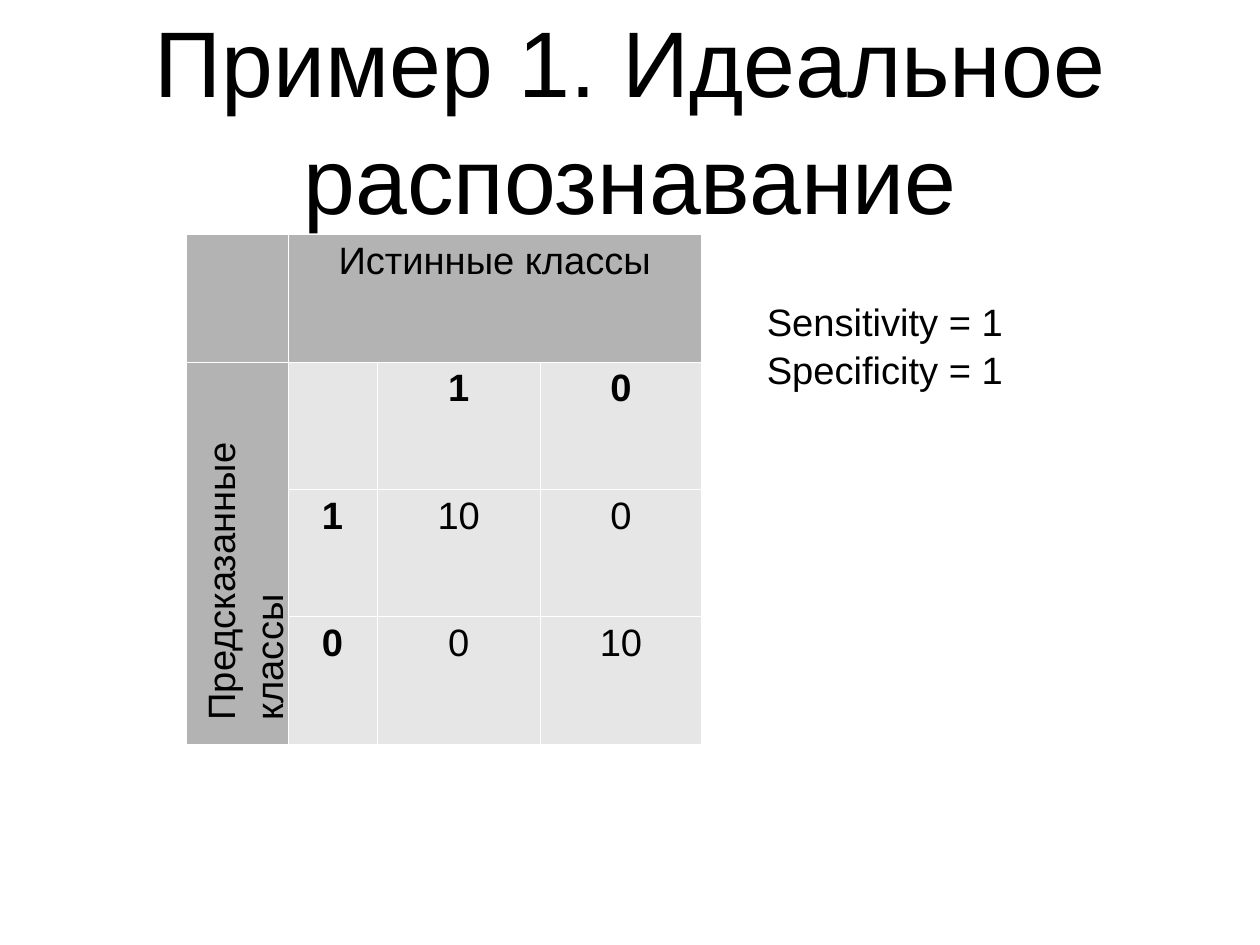
from lxml import etree
from pptx import Presentation
from pptx.dml import color
from pptx.enum import text
from pptx.oxml import ns
from pptx.util import Cm, Pt

COLORS = {"ink": "000000", "heading": "B3B3B3", "body": "E6E6E6", "rule": "FFFFFF"}
FONT = "Arial"
MATRIX = [
    ["", "Истинные классы", "", ""],
    ["", "", "1", "0"],
    ["", "1", "10", "0"],
    ["", "0", "0", "10"],
]
COLUMN_WIDTHS = [2.26, 1.98, 3.63, 3.58]


def rgb(name):
    """Return the palette colour with this name."""
    return color.RGBColor.from_string(COLORS[name])


def set_attributes(target, values):
    """Set every named attribute on the target."""
    for name, value in values.items():
        setattr(target, name, value)


def write(frame, lines, size=24, align=text.PP_ALIGN.LEFT, bold=False, spacing=1.05):
    """Fill a text frame with one formatted paragraph per line."""
    frame.text = "\n".join(lines)
    for paragraph in frame.paragraphs:
        set_attributes(paragraph, {"alignment": align, "line_spacing": spacing})
        set_attributes(paragraph.font, {"name": FONT, "size": Pt(size), "bold": bold})
        paragraph.font.color.rgb = rgb("ink")


def add_title(slide, box, heading):
    """Place the slide title in its box."""
    title = slide.shapes.title
    set_attributes(title, dict(zip(("left", "top", "width", "height"), map(Cm, box))))
    set_attributes(title.text_frame, {
        "word_wrap": True, "auto_size": text.MSO_AUTO_SIZE.NONE,
        "vertical_anchor": text.MSO_ANCHOR.MIDDLE,
        "margin_left": 0, "margin_right": 0, "margin_top": 0, "margin_bottom": 0,
    })
    write(title.text_frame, [heading], size=58.7, align=text.PP_ALIGN.CENTER)


def add_note(slide, box, lines, rotation=0):
    """Place left-aligned lines in a box, turned if asked."""
    note = slide.shapes.add_textbox(*map(Cm, box))
    note.rotation = rotation
    note.text_frame.word_wrap = True
    write(note.text_frame, lines)


def set_borders(cell):
    """Give a cell hairline borders on all sides."""
    properties = cell._tc.get_or_add_tcPr()
    for position, side in enumerate(("lnL", "lnR", "lnT", "lnB")):
        line = etree.Element(ns.qn(f"a:{side}"), w=str(Pt(0.06)))
        fill = etree.SubElement(line, ns.qn("a:solidFill"))
        etree.SubElement(fill, ns.qn("a:srgbClr"), val=COLORS["rule"])
        properties.insert(position, line)


def add_confusion_matrix(slide, left, top, row_height):
    """Draw the confusion matrix and its turned row heading."""
    width, height = sum(COLUMN_WIDTHS), row_height * len(MATRIX)
    table = slide.shapes.add_table(
        len(MATRIX), len(COLUMN_WIDTHS), *map(Cm, (left, top, width, height))).table
    for column, column_width in zip(table.columns, COLUMN_WIDTHS):
        column.width = Cm(column_width)
    for r, values in enumerate(MATRIX):
        for c, value in enumerate(values):
            cell = table.cell(r, c)
            cell.fill.solid()
            cell.fill.fore_color.rgb = rgb("heading" if r == 0 or c == 0 else "body")
            set_borders(cell)
            if value:
                write(cell.text_frame, [value], align=text.PP_ALIGN.CENTER,
                      bold=r > 0 and (r == 1 or c == 1), spacing=1.0)
    table.cell(0, 1).merge(table.cell(0, 3))
    table.cell(1, 0).merge(table.cell(3, 0))

    label_length, label_depth = 9.6, 2.13
    center_x, center_y = left + COLUMN_WIDTHS[0] / 2, top + 6.25
    label_box = (center_x - label_length / 2, center_y - label_depth / 2,
                 label_length, label_depth)
    add_note(slide, label_box, ["Предсказанные классы"], rotation=270)


def main():
    """Build the slide and save it."""
    deck = Presentation()
    set_attributes(deck, {"slide_width": Cm(28), "slide_height": Cm(21)})
    slide = deck.slides.add_slide(deck.slide_layouts[5])
    add_title(slide, (1.4, -0.51, 25.2, 6.17), "Пример 1. Идеальное распознавание")
    add_confusion_matrix(slide, 4.14, 5.21, 2.83)
    add_note(slide, (16.79, 6.45, 7.01, 3.17), ["Sensitivity = 1", "Specificity = 1"])
    deck.save("out.pptx")


if __name__ == "__main__":
    main()
